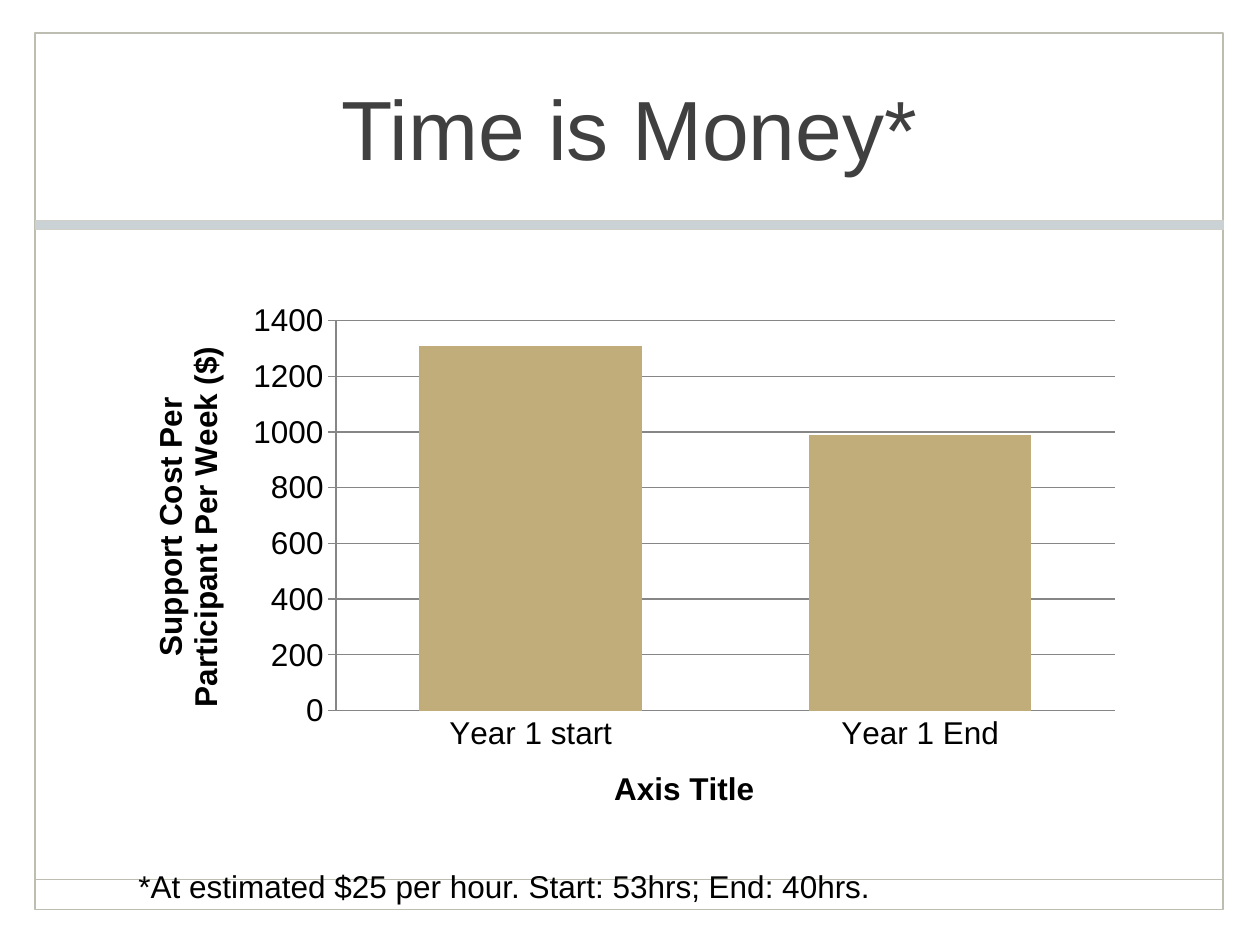
from dataclasses import dataclass
from typing import Optional

from lxml.etree import SubElement
from pptx import Presentation
from pptx.chart.data import CategoryChartData
from pptx.dml.color import RGBColor
from pptx.enum.chart import XL_CHART_TYPE, XL_TICK_MARK
from pptx.enum.shapes import MSO_CONNECTOR, MSO_SHAPE
from pptx.enum.text import MSO_ANCHOR, MSO_AUTO_SIZE, PP_ALIGN
from pptx.oxml.ns import qn
from pptx.util import Emu, Pt

EMU_PER_PX = 9144
FONT = "Arial"
BLACK = "000000"
FRAME_COLOR = "BEBDB2"
GRID_COLOR = "868686"


@dataclass(frozen=True)
class Box:
    left: int
    top: int
    width: int
    height: int

    def emu(self) -> tuple:
        return tuple(px(value) for value in (self.left, self.top, self.width, self.height))


@dataclass(frozen=True)
class Panel:
    box: Box
    line: str
    line_width: float
    fill: Optional[str] = None


FRAME = Box(28, 26, 943, 696)
PANELS = [
    Panel(FRAME, FRAME_COLOR, 1),
    Panel(Box(28, 175, 943, 7), "D1D0C8", 0.25, "CBD2D5"),
]
FOOTER_RULE_TOP = 698


def px(value: int) -> Emu:
    return Emu(value * EMU_PER_PX)


def color(value: str) -> RGBColor:
    return RGBColor.from_string(value)


def set_font(font, size: int, value: str = BLACK, bold: bool = False) -> None:
    font.name = FONT
    font.size = Pt(size)
    font.bold = bold
    font.color.rgb = color(value)


def set_line(line, value: str, width: float) -> None:
    line.color.rgb = color(value)
    line.width = Pt(width)


def draw_panel(slide, panel: Panel) -> None:
    shape = slide.shapes.add_shape(MSO_SHAPE.RECTANGLE, *panel.box.emu())
    shape.shadow.inherit = False
    set_line(shape.line, panel.line, panel.line_width)
    if panel.fill:
        shape.fill.solid()
        shape.fill.fore_color.rgb = color(panel.fill)
    else:
        shape.fill.background()


def draw_footer_rule(slide) -> None:
    top = px(FOOTER_RULE_TOP)
    connector = slide.shapes.add_connector(
        MSO_CONNECTOR.STRAIGHT, px(FRAME.left), top, px(FRAME.left + FRAME.width), top
    )
    set_line(connector.line, FRAME_COLOR, 1)
    SubElement(connector.element.spPr, qn("a:effectLst"))


def write_title(slide, box: Box, text: str) -> None:
    title = slide.shapes.title
    title.left, title.top, title.width, title.height = box.emu()
    frame = title.text_frame
    frame.text = text
    frame.vertical_anchor = MSO_ANCHOR.MIDDLE
    paragraph = frame.paragraphs[0]
    paragraph.alignment = PP_ALIGN.CENTER
    set_font(paragraph.font, 48, "404040")


def write_note(slide, box: Box, text: str) -> None:
    frame = slide.shapes.add_textbox(*box.emu()).text_frame
    frame.word_wrap = False
    frame.auto_size = MSO_AUTO_SIZE.SHAPE_TO_FIT_TEXT
    frame.text = text
    set_font(frame.paragraphs[0].font, 18)


def format_axis(axis, title: str, tick_mark) -> None:
    axis.major_tick_mark = tick_mark
    axis.minor_tick_mark = XL_TICK_MARK.NONE
    set_line(axis.format.line, GRID_COLOR, 0.75)
    set_font(axis.tick_labels.font, 18)
    frame = axis.axis_title.text_frame
    frame.text = title
    set_font(frame.paragraphs[0].font, 18, bold=True)


def place_plot_area(chart, x: float, y: float, width: float, height: float) -> None:
    plot_area = chart.element.find(".//" + qn("c:plotArea"))
    layout = plot_area.find(qn("c:layout"))
    if layout is None:
        layout = SubElement(plot_area, qn("c:layout"))
        plot_area.insert(0, layout)
    manual = SubElement(layout, qn("c:manualLayout"))
    settings = {"layoutTarget": "inner", "xMode": "edge", "yMode": "edge",
                "x": x, "y": y, "w": width, "h": height}
    for name, value in settings.items():
        SubElement(manual, qn(f"c:{name}")).set("val", str(value))


def draw_cost_chart(slide, box: Box) -> None:
    data = CategoryChartData()
    data.categories = ["Year 1 start", "Year 1 End"]
    data.add_series("Series 1", [1310, 990])
    chart = slide.shapes.add_chart(XL_CHART_TYPE.COLUMN_STACKED, *box.emu(), data).chart
    chart.has_legend = False
    chart.has_title = False
    set_font(chart.font, 18)
    plot = chart.plots[0]
    plot.gap_width = 75
    plot.overlap = 100
    plot.vary_by_categories = False
    fill = plot.series[0].format.fill
    fill.solid()
    fill.fore_color.rgb = color("C1AD79")
    format_axis(chart.category_axis, "Axis Title", XL_TICK_MARK.NONE)
    value_axis = chart.value_axis
    format_axis(value_axis, "Support Cost Per Participant Per Week ($)", XL_TICK_MARK.OUTSIDE)
    value_axis.minimum_scale = 0
    value_axis.maximum_scale = 1400
    value_axis.major_unit = 200
    value_axis.has_major_gridlines = True
    set_line(value_axis.major_gridlines.format.line, GRID_COLOR, 0.75)
    place_plot_area(chart, 0.21, 0.05, 0.77, 0.72)


def main() -> None:
    presentation = Presentation()
    presentation.slide_width = px(1000)
    presentation.slide_height = px(750)
    slide = presentation.slides.add_slide(presentation.slide_layouts[5])
    for panel in PANELS:
        draw_panel(slide, panel)
    draw_footer_rule(slide)
    write_title(slide, Box(98, 27, 803, 147), "Time is Money*")
    draw_cost_chart(slide, Box(98, 233, 803, 430))
    write_note(slide, Box(100, 683, 606, 40),
               "*At estimated $25 per hour. Start: 53hrs; End: 40hrs.")
    presentation.save("out.pptx")


if __name__ == "__main__":
    main()
